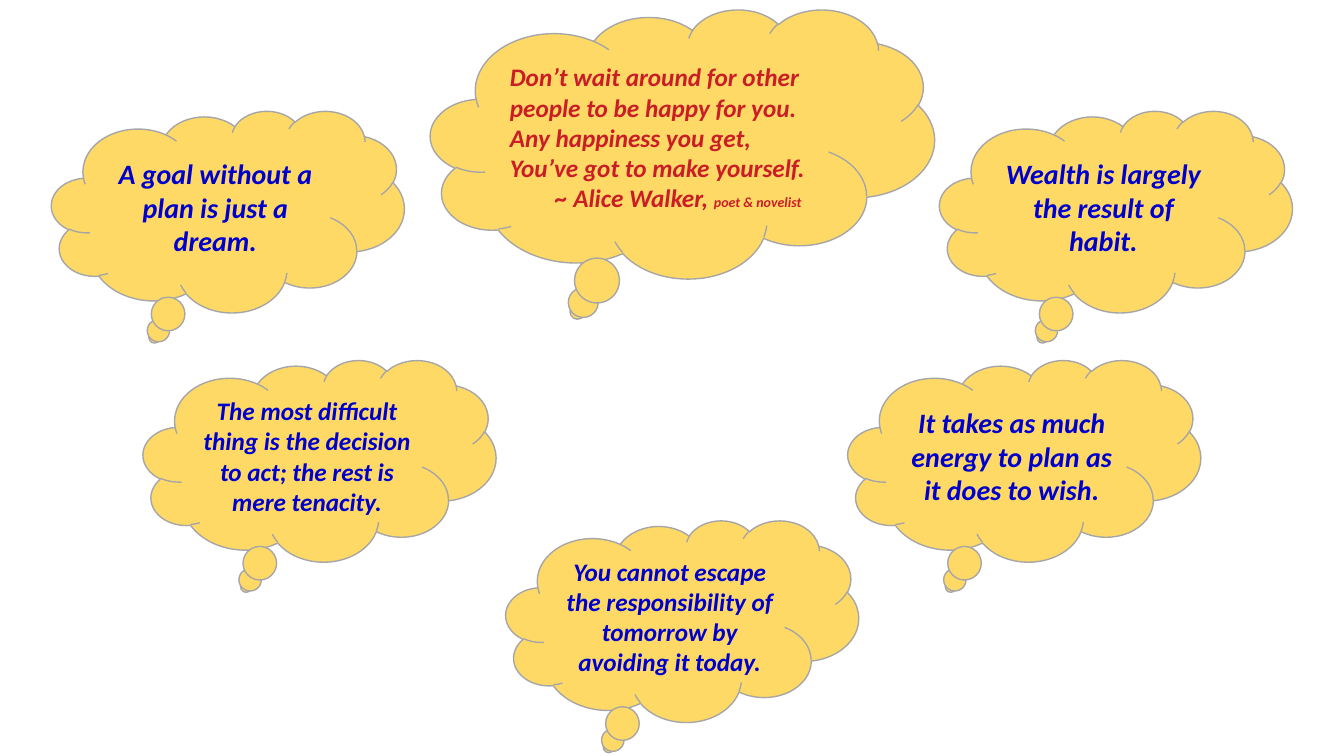
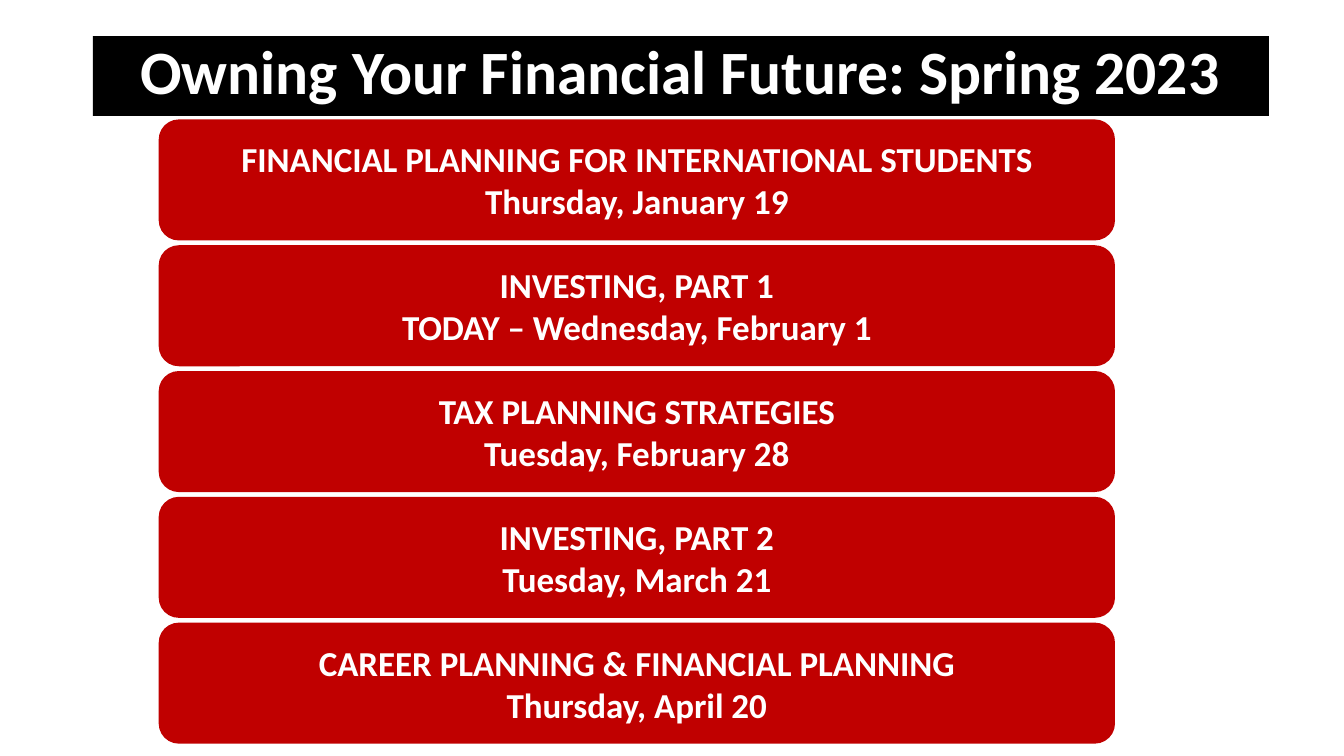
from pptx import Presentation
from pptx.dml.color import RGBColor
from pptx.enum.shapes import MSO_SHAPE
from pptx.enum.text import MSO_ANCHOR, PP_ALIGN
from pptx.util import Cm, Pt

FONT = "Calibri"
WHITE, BLACK, RED = "FFFFFF", "000000", "C00000"
CLOUD, OUTLINE, BLUE, CRIMSON = "FFD966", "A6A6A6", "0000CC", "CA1E27"
SLIDE_W, SLIDE_H = 33.87, 19.05
CLOUD_W, CLOUD_H = 8.89, 5.08

SIDE_QUOTES = [
    (1.3, 2.79, 20, "A goal without a plan is just a dream.",
     20, "Wealth is largely the result of habit."),
    (3.61, 9.07, 18, "The most difficult thing is the decision to act; the rest is mere tenacity.",
     20, "It takes as much energy to plan as it does to wish."),
]
BOTTOM_QUOTE = "You cannot escape the responsibility of tomorrow by avoiding it today."
WALKER_LINES = [
    "Don’t wait around for other people to be happy for you.",
    "Any happiness you get,",
    "You’ve got to make yourself.",
    "~ Alice Walker, ",
]
SESSIONS = [
    ("FINANCIAL PLANNING FOR INTERNATIONAL STUDENTS", "Thursday, January 19"),
    ("INVESTING, PART 1", "TODAY – Wednesday, February 1"),
    ("TAX PLANNING STRATEGIES", "Tuesday, February 28"),
    ("INVESTING, PART 2", "Tuesday, March 21"),
    ("CAREER PLANNING & FINANCIAL PLANNING", "Thursday, April 20"),
]


def color(value):
    return RGBColor.from_string(value)


def add_box(s, kind, box, fill, lines, size, text_color,
            line=None, italic=False, align=PP_ALIGN.CENTER):
    sp = s.shapes.add_shape(kind, *(Cm(v) for v in box))
    sp.shadow.inherit = False
    sp.fill.solid()
    sp.fill.fore_color.rgb = color(fill)
    if line:
        sp.line.color.rgb = color(line)
        sp.line.width = Pt(1)
    else:
        sp.line.fill.background()
    tf = sp.text_frame
    tf.word_wrap = True
    tf.vertical_anchor = MSO_ANCHOR.MIDDLE
    tf.text = "\n".join(lines)
    for p in tf.paragraphs:
        p.alignment = align
        for r in p.runs:
            style_run(r, size, text_color, italic)
    return sp


def style_run(r, size, text_color, italic=False):
    r.font.name = FONT
    r.font.size = Pt(size)
    r.font.bold = True
    r.font.italic = italic
    r.font.color.rgb = color(text_color)


def add_cloud(s, box, lines, size, text_color=BLUE, align=PP_ALIGN.CENTER):
    return add_box(s, MSO_SHAPE.CLOUD_CALLOUT, box, CLOUD, lines, size,
                   text_color, OUTLINE, True, align)


def add_walker_cloud(s, box):
    sp = add_cloud(s, box, WALKER_LINES, 18, CRIMSON, PP_ALIGN.LEFT)
    p = sp.text_frame.paragraphs[-1]
    p._p.get_or_add_pPr().set("marL", str(Cm(1.14)))
    r = p.add_run()
    r.text = "poet & novelist"
    style_run(r, 10, CRIMSON, True)


def quotes_slide(s, box):
    x, y, w, h = box
    for dx, dy, left_size, left_text, right_size, right_text in SIDE_QUOTES:
        right = x + w - dx - CLOUD_W
        add_cloud(s, (x + dx, y + dy, CLOUD_W, CLOUD_H), [left_text], left_size)
        add_cloud(s, (right, y + dy, CLOUD_W, CLOUD_H), [right_text], right_size)
    add_cloud(s, (x + 12.75, y + 13.11, CLOUD_W, CLOUD_H), [BOTTOM_QUOTE], 18)
    add_walker_cloud(s, (x + 10.85, y + 0.23, 12.7, 6.78))


def schedule_slide(s, box):
    x, y, w, h = box
    title = add_box(s, MSO_SHAPE.RECTANGLE, (x + 2.34, y + 0.91, 29.64, 2.01), BLACK,
                    ["Owning Your Financial Future: Spring 2023"], 44, WHITE)
    title.text_frame.vertical_anchor = MSO_ANCHOR.TOP
    title.text_frame.paragraphs[0].line_spacing = 0.9
    bar_h, gap = 3.05, 0.12
    for i, lines in enumerate(SESSIONS):
        top = y + 3.01 + i * (bar_h + gap)
        add_box(s, MSO_SHAPE.ROUNDED_RECTANGLE, (x + 4, top, 24.1, bar_h),
                RED, lines, 25, WHITE)


def main():
    prs = Presentation()
    prs.slide_width, prs.slide_height = Cm(SLIDE_W), Cm(SLIDE_H)
    for build in (quotes_slide, schedule_slide):
        s = prs.slides.add_slide(prs.slide_layouts[6])
        build(s, (0, 0, SLIDE_W, SLIDE_H))
    prs.save("out.pptx")


if __name__ == "__main__":
    main()
